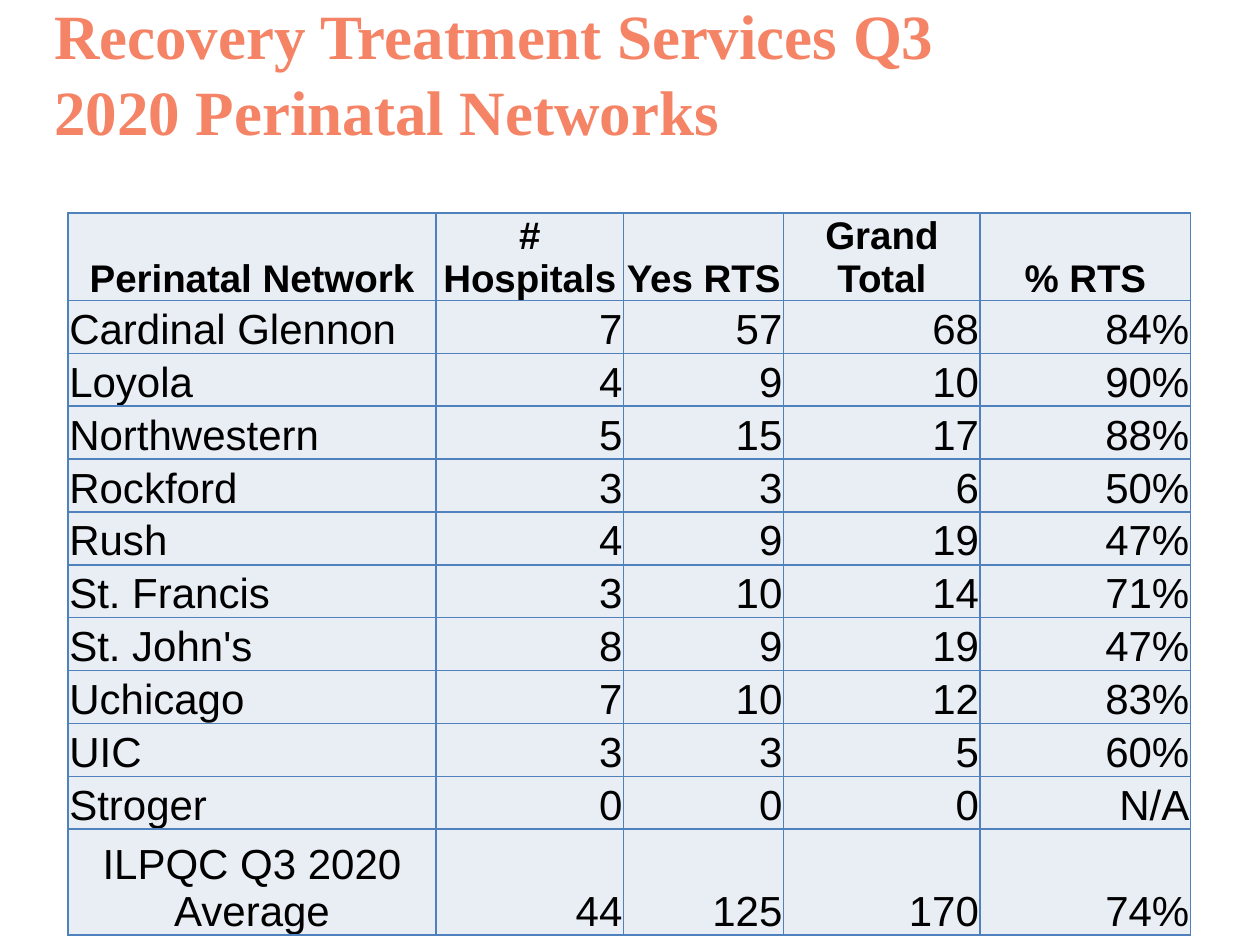
from lxml import etree
from pptx import Presentation
from pptx.dml.color import RGBColor
from pptx.enum.text import MSO_ANCHOR, PP_ALIGN
from pptx.oxml.ns import qn
from pptx.util import Inches, Pt

LEFT, CENTER, RIGHT = PP_ALIGN.LEFT, PP_ALIGN.CENTER, PP_ALIGN.RIGHT
MIDDLE, BOTTOM = MSO_ANCHOR.MIDDLE, MSO_ANCHOR.BOTTOM

TITLE = "Recovery Treatment Services Q3 2020 Perinatal Networks"
COLUMNS = [2.92, 1.49, 1.27, 1.56, 1.67]
ROW = 0.42
DATA = [
    ("Perinatal Network", "# Hospitals", "Yes RTS", "Grand Total", "% RTS"),
    ("Cardinal Glennon", "7", "57", "68", "84%"),
    ("Loyola", "4", "9", "10", "90%"),
    ("Northwestern", "5", "15", "17", "88%"),
    ("Rockford", "3", "3", "6", "50%"),
    ("Rush", "4", "9", "19", "47%"),
    ("St. Francis", "3", "10", "14", "71%"),
    ("St. John's", "8", "9", "19", "47%"),
    ("Uchicago", "7", "10", "12", "83%"),
    ("UIC", "3", "3", "5", "60%"),
    ("Stroger", "0", "0", "0", "N/A"),
    ("ILPQC Q3 2020 Average", "44", "125", "170", "74%"),
]


def rgb(value):
    return RGBColor.from_string(value)


def style(p, name, size, color, bold, align):
    p.alignment = align
    for r in p.runs:
        r.font.name = name
        r.font.size = Pt(size)
        r.font.bold = bold
        r.font.color.rgb = rgb(color)


def add_borders(cell, color, width):
    tcPr = cell._tc.get_or_add_tcPr()
    for i, side in enumerate(("lnL", "lnR", "lnT", "lnB")):
        ln = etree.Element(qn(f"a:{side}"), w=str(Pt(width)))
        fill = etree.SubElement(ln, qn("a:solidFill"))
        etree.SubElement(fill, qn("a:srgbClr"), val=color)
        tcPr.insert(i, ln)


def add_title(s, left, top, width, height):
    sp = s.shapes.title
    sp.left, sp.top = Inches(left), Inches(top)
    sp.width, sp.height = Inches(width), Inches(height)
    tf = sp.text_frame
    tf.text = TITLE
    tf.word_wrap = True
    tf.vertical_anchor = MIDDLE
    style(tf.paragraphs[0], "Times New Roman", 36, "F58466", True, LEFT)


def format_cell(cell, text, size, bold, align):
    cell.text = text
    cell.vertical_anchor = BOTTOM
    cell.margin_left = cell.margin_right = cell.margin_top = Inches(0.01)
    cell.margin_bottom = 0
    cell.fill.solid()
    cell.fill.fore_color.rgb = rgb("E9EDF4")
    add_borders(cell, "4F81BD", 1)
    style(cell.text_frame.paragraphs[0], "Arial", size, "000000", bold, align)


def add_network_table(s, left, top):
    last = len(DATA) - 1
    heights = [ROW] * last + [2 * ROW]
    table = s.shapes.add_table(
        len(DATA), len(COLUMNS), Inches(left), Inches(top),
        Inches(sum(COLUMNS)), Inches(sum(heights))).table
    table.horz_banding = False
    for column, width in zip(table.columns, COLUMNS):
        column.width = Inches(width)
    for i, (row, height, values) in enumerate(zip(table.rows, heights, DATA)):
        row.height = Inches(height)
        header = i == 0
        label_align = CENTER if i in (0, last) else LEFT
        number_align = CENTER if header else RIGHT
        for j, text in enumerate(values):
            format_cell(table.cell(i, j), text, 22 if header else 24, header,
                        number_align if j else label_align)


def main():
    prs = Presentation()
    prs.slide_width, prs.slide_height = Inches(10), Inches(7.5)
    s = prs.slides.add_slide(prs.slide_layouts[5])
    add_title(s, 0.33, -0.05, 7.25, 1.25)
    add_network_table(s, 0.54, 1.69)
    prs.save("out.pptx")


if __name__ == "__main__":
    main()
